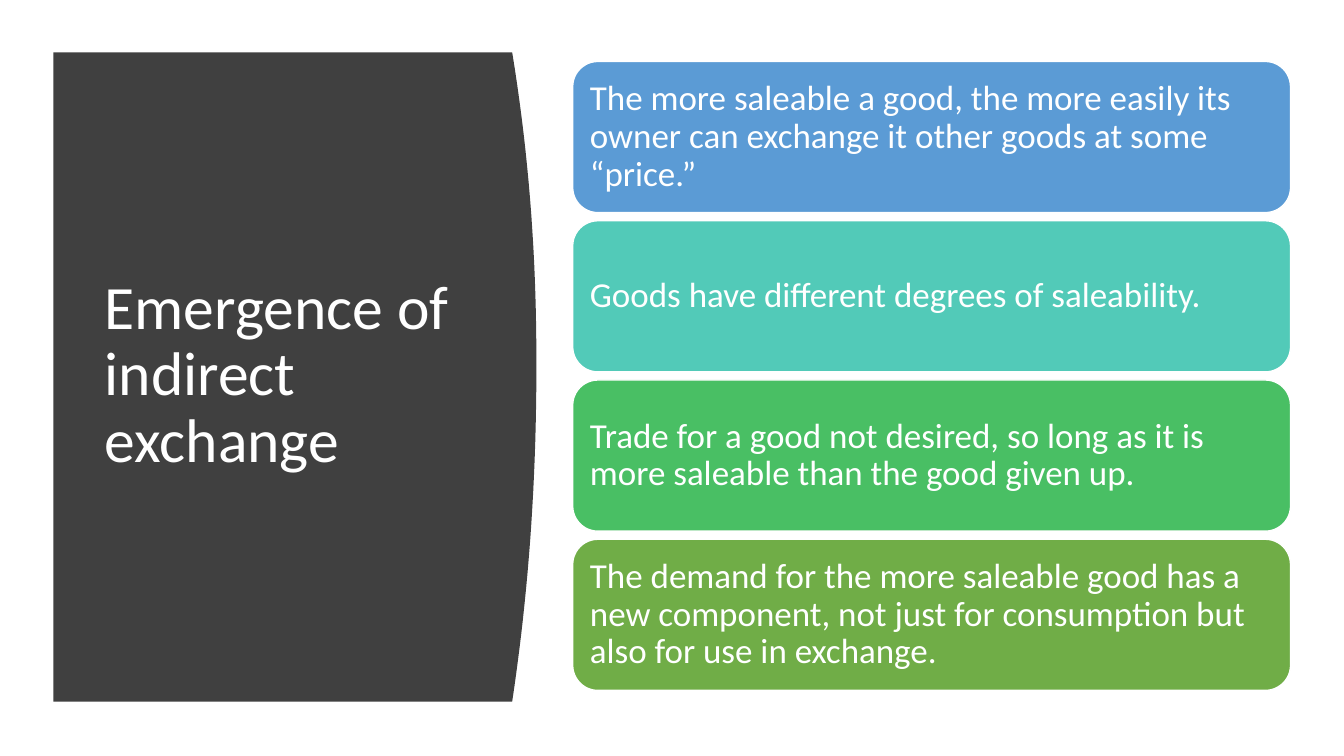
from pptx import Presentation
from pptx.dml.color import RGBColor as Rgb
from pptx.enum.shapes import MSO_SHAPE as Kind
from pptx.enum.text import MSO_ANCHOR as Anchor, PP_ALIGN as Align
from pptx.util import Inches, Pt

COLORS = {
    "white": "FFFFFF",
    "dark": "404040",
    "blue": "5B9BD5",
    "teal": "52CAB8",
    "green": "49BF64",
    "olive": "70AD47",
}

POINTS = [
    ("blue", "The more saleable a good, the more easily its owner can exchange it other goods at some “price.”"),
    ("teal", "Goods have different degrees of saleability."),
    ("green", "Trade for a good not desired, so long as it is more saleable than the good given up."),
    ("olive", "The demand for the more saleable good has a new component, not just for consumption but also for use in exchange."),
]


class Deck:
    font = "Calibri"

    def __init__(self, slide):
        self.slide = slide
        self.shapes = slide.shapes

    def color(self, name):
        return Rgb.from_string(COLORS[name])

    def paint(self, shape, fill, line=None):
        shape.shadow.inherit = False
        shape.fill.solid()
        shape.fill.fore_color.rgb = self.color(fill)
        if line:
            shape.line.color.rgb = self.color(line)
            shape.line.width = Pt(1)
        else:
            shape.line.fill.background()

    def label(self, shape, text, size, pad):
        frame = shape.text_frame
        frame.text = text
        frame.word_wrap = True
        frame.vertical_anchor = Anchor.MIDDLE
        frame.margin_left = frame.margin_right = Inches(0.1)
        frame.margin_top = frame.margin_bottom = Inches(pad)
        for para in frame.paragraphs:
            para.alignment = Align.LEFT
            para.line_spacing = 0.9
            for run in para.runs:
                run.font.name = self.font
                run.font.size = Pt(size)
                run.font.color.rgb = self.color("white")

    def panel(self, left, top, edge, bulge, peak, base, steps=40):
        curve = []
        for i in range(steps + 1):
            y = top + (base - top) * i / steps
            reach = peak - top if y < peak else base - peak
            x = edge + bulge * (1 - (abs(y - peak) / reach) ** 2.1)
            curve.append((Inches(x), Inches(y)))
        build = self.shapes.build_freeform(Inches(left), Inches(top))
        build.add_line_segments(curve + [(Inches(left), Inches(base))])
        self.paint(build.convert_to_shape(), "dark")

    def title(self, text, left, top, width, height):
        box = self.shapes.add_textbox(*map(Inches, (left, top, width, height)))
        self.label(box, text, 44, 0.05)

    def card(self, text, fill, left, top, width, height):
        box = self.shapes.add_shape(
            Kind.ROUNDED_RECTANGLE, *map(Inches, (left, top, width, height)))
        self.paint(box, fill, "white")
        self.label(box, text, 25, 0.1)


def main():
    show = Presentation()
    show.slide_width = Inches(13.33)
    show.slide_height = Inches(7.5)
    deck = Deck(show.slides.add_slide(show.slide_layouts[6]))
    deck.panel(0.53, 0.52, 5.08, 0.24, 3.6, 6.96)
    deck.title("Emergence of indirect exchange", 0.94, 1.11, 3.74, 5.24)
    for i, (fill, text) in enumerate(POINTS):
        deck.card(text, fill, 5.68, 0.61 + 1.58 * i, 7.12, 1.5)
    show.save("out.pptx")


if __name__ == "__main__":
    main()
